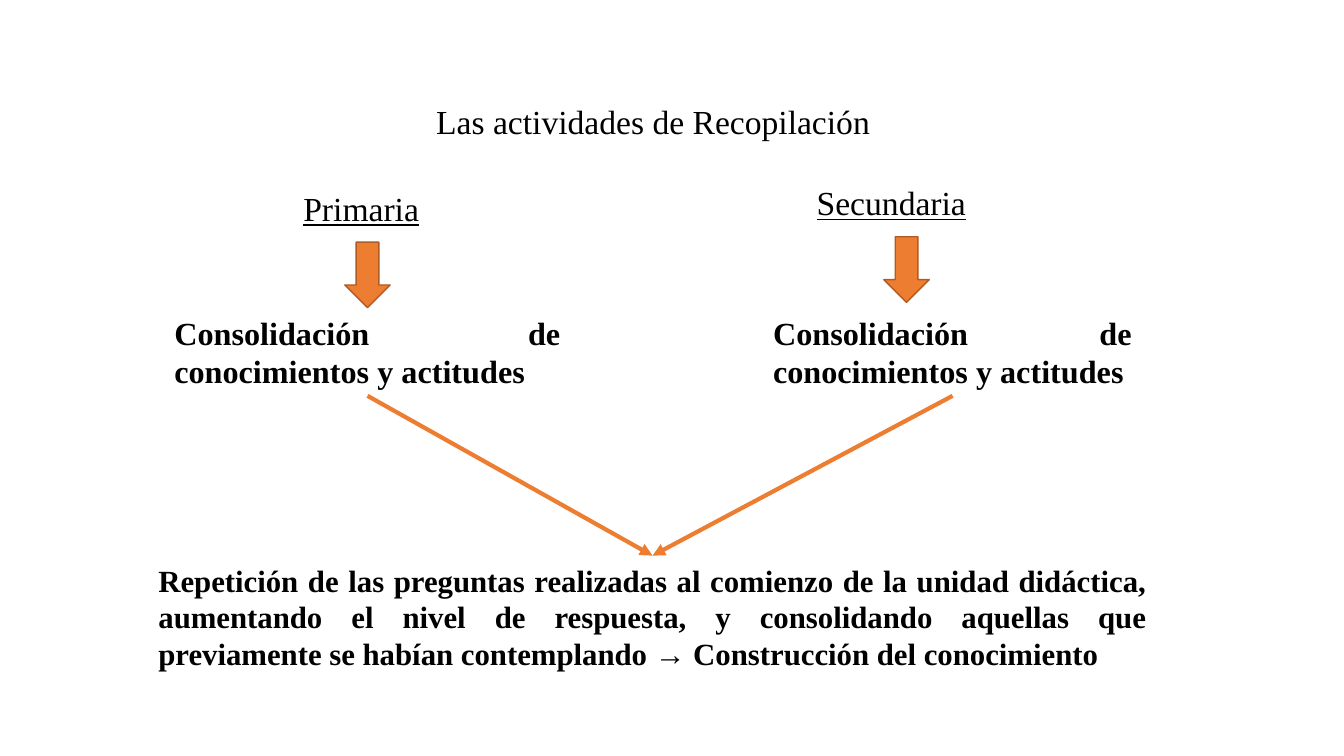
from dataclasses import dataclass

from lxml import etree
from pptx import Presentation
from pptx import util as u
from pptx.dml.color import RGBColor
from pptx.enum import shapes, text
from pptx.oxml import ns


@dataclass(frozen=True)
class Theme:
    """Colours, type sizes and line widths of the slide."""
    font: str = "Times New Roman"
    ink: RGBColor = RGBColor(0x00, 0x00, 0x00)
    accent: RGBColor = RGBColor(0xED, 0x7D, 0x31)
    edge: RGBColor = RGBColor(0xAF, 0x5C, 0x24)
    heading: int = 24
    finding: int = 23
    conclusion: int = 22
    edge_width: int = 1
    link_width: int = 3


THEME = Theme()
WIDTH, HEIGHT = u.Inches(13.33), u.Inches(7.5)
COL, ROW = WIDTH / 100, HEIGHT / 100
ARROW_W, ARROW_H, ARROW_DROP = 3.38, 8.67, 7.9
HARD_SPACE = chr(160)
FINDING = "Consolidación de conocimientos y actitudes"
STAGES = [
    ("Primaria", (21.83, 24.13, 11.03, 6.8), (12.23, 40.63, 30.23, 11.73)),
    ("Secundaria", (60.03, 23.43, 14.85, 6.8), (56.78, 40.63, 28.2, 11.73)),
]


def place(box):
    """Turn a box in columns and rows into slide lengths."""
    x, y, w, h = box
    return [int(n) for n in (x * COL, y * ROW, w * COL, h * ROW)]


def write(sp, words, size, align, anchor, bold=False, underline=False):
    """Set the text of a shape as one formatted run."""
    tf = sp.text_frame
    tf.word_wrap = True
    tf.auto_size = text.MSO_AUTO_SIZE.NONE
    tf.vertical_anchor = anchor
    p = tf.paragraphs[0]
    p.alignment = align
    r = p.add_run()
    r.text = words
    r.font.name, r.font.size = THEME.font, u.Pt(size)
    r.font.bold, r.font.underline = bold, underline
    r.font.color.rgb = THEME.ink


def add_title(s, box):
    """Place the slide title in its placeholder."""
    sp = s.shapes.title
    sp.left, sp.top, sp.width, sp.height = place(box)
    write(sp, "Las actividades de Recopilación", THEME.heading,
          text.PP_ALIGN.CENTER, text.MSO_ANCHOR.TOP)


def add_statement(s, box, words, size):
    """Add a bold justified statement and return its box."""
    sp = s.shapes.add_textbox(*place(box))
    write(sp, words, size, text.PP_ALIGN.JUSTIFY, text.MSO_ANCHOR.MIDDLE, bold=True)
    return sp


def add_stage(s, name, label_box, finding_box):
    """Add a school stage: label, down arrow and finding."""
    label = s.shapes.add_textbox(*place(label_box))
    write(label, name, THEME.heading, text.PP_ALIGN.JUSTIFY,
          text.MSO_ANCHOR.TOP, underline=True)
    x, y, w, _ = label_box
    arrow_box = (x + (w - ARROW_W) / 2, y + ARROW_DROP, ARROW_W, ARROW_H)
    arrow = s.shapes.add_shape(shapes.MSO_SHAPE.DOWN_ARROW, *place(arrow_box))
    arrow.shadow.inherit = False
    arrow.fill.solid()
    arrow.fill.fore_color.rgb = THEME.accent
    arrow.line.color.rgb = THEME.edge
    arrow.line.width = u.Pt(THEME.edge_width)
    return add_statement(s, finding_box, FINDING, THEME.finding)


def add_link(s, start, end):
    """Join the bottom of one box to the top of another with an arrow."""
    link = s.shapes.add_connector(shapes.MSO_CONNECTOR.STRAIGHT, 0, 0, 0, 0)
    link.begin_connect(start, 2)
    link.end_connect(end, 0)
    link.line.color.rgb = THEME.accent
    link.line.width = u.Pt(THEME.link_width)
    etree.SubElement(link.line._get_or_add_ln(), ns.qn("a:tailEnd"), type="triangle")
    etree.SubElement(link._element.spPr, ns.qn("a:effectLst"))


def build_slide(prs):
    """Build the slide that leads both stages to one conclusion."""
    s = prs.slides.add_slide(prs.slide_layouts[5])
    add_title(s, (11.1, 12.67, 75, 6.67))
    findings = [add_stage(s, *stage) for stage in STAGES]
    conclusion = add_statement(
        s, (11.05, 73.5, 75, 16.13),
        "Repetición de las preguntas realizadas al comienzo de la unidad didáctica, "
        f"aumentando el nivel de respuesta, y consolidando aquellas que previamente{HARD_SPACE}"
        "se habían contemplando → Construcción del conocimiento", THEME.conclusion)
    for finding in findings:
        add_link(s, finding, conclusion)


def main():
    """Create and save the presentation."""
    prs = Presentation()
    prs.slide_width, prs.slide_height = WIDTH, HEIGHT
    build_slide(prs)
    prs.save("out.pptx")


if __name__ == "__main__":
    main()
